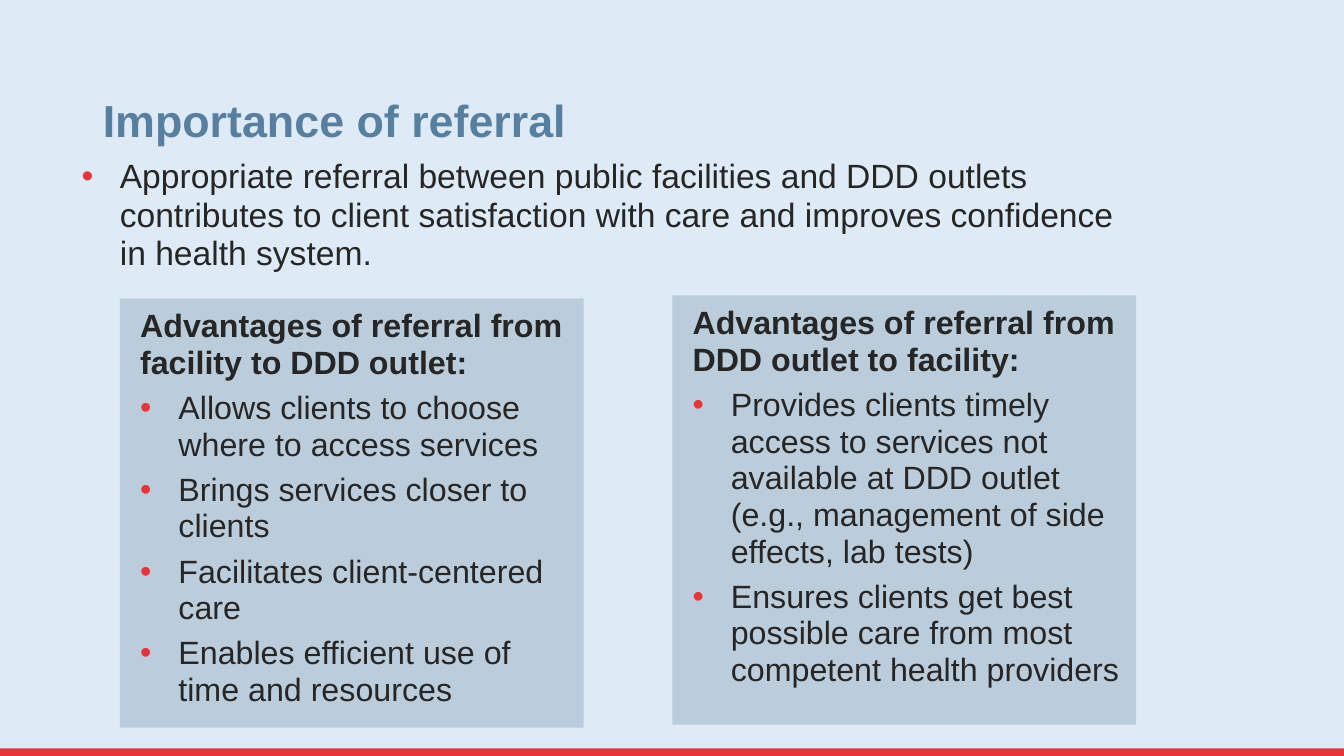
from dataclasses import dataclass

from lxml import etree
from pptx import Presentation
from pptx.dml.color import RGBColor
from pptx.enum.shapes import MSO_SHAPE
from pptx.enum.text import MSO_ANCHOR, PP_ALIGN
from pptx.oxml.ns import qn
from pptx.util import Inches, Pt

RECT = MSO_SHAPE.RECTANGLE
TOP, BOTTOM = MSO_ANCHOR.TOP, MSO_ANCHOR.BOTTOM
LEFT = PP_ALIGN.LEFT
WIDE, HIGH = Inches(13.333), Inches(7.5)
HANG = Inches(0.38)
COLORS = {"back": "DEEBF7", "red": "E73439", "title": "577F9F",
          "panel": "BBCCDA", "text": "262626"}


@dataclass(frozen=True)
class Box:
    """Place and size in percent of the slide."""
    left: float
    top: float
    width: float
    height: float

    def spots(self) -> tuple[int, int, int, int]:
        return (int(WIDE * self.left / 100), int(HIGH * self.top / 100),
                int(WIDE * self.width / 100), int(HIGH * self.height / 100))


@dataclass(frozen=True)
class Panel:
    box: Box
    head: str
    points: tuple[str, ...]


TITLE = Box(6.9, 8.53, 86.25, 11.6)
LEAD = Box(5.33, 20.27, 78.38, 16.67)
BAR = Box(0, 99, 100, 1)
PANELS = (
    Panel(Box(8.93, 39.47, 34.5, 56.8),
          "Advantages of referral from facility to DDD outlet:",
          ("Allows clients to choose where to access services",
           "Brings services closer to clients",
           "Facilitates client-centered care",
           "Enables efficient use of time and resources")),
    Panel(Box(50.03, 39.07, 34.5, 56.8),
          "Advantages of referral from DDD outlet to facility:",
          ("Provides clients timely access to services not available at DDD "
           "outlet (e.g., management of side effects, lab tests)",
           "Ensures clients get best possible care from most competent "
           "health providers")),
)


def color(name: str) -> RGBColor:
    return RGBColor.from_string(COLORS[name])


def apply(item, values: dict) -> None:
    for name, value in values.items():
        setattr(item, name, value)


def bullet(para) -> None:
    props = para._p.get_or_add_pPr()
    props.set("marL", str(HANG))
    props.set("indent", str(-HANG))
    tint = etree.SubElement(props, qn("a:buClr"))
    etree.SubElement(tint, qn("a:srgbClr"), val=COLORS["red"])
    etree.SubElement(props, qn("a:buFont"), typeface="Arial")
    etree.SubElement(props, qn("a:buChar"), char="•")


def write(para, text: str, size: float, hue: str = "text",
          bold: bool = False, dot: bool = False, gap: float = 0,
          line: float = 0.95) -> None:
    para.text = text
    if dot:
        bullet(para)
    apply(para, {"alignment": LEFT, "line_spacing": line,
                 "space_before": Pt(gap)})
    apply(para.font, {"name": "Arial", "size": Pt(size), "bold": bold})
    para.font.color.rgb = color(hue)


def block(slide, box: Box, hue: str):
    shape = slide.shapes.add_shape(RECT, *box.spots())
    shape.shadow.inherit = False
    shape.fill.solid()
    shape.fill.fore_color.rgb = color(hue)
    shape.line.fill.background()
    return shape


def draw(slide, panel: Panel) -> None:
    frame = block(slide, panel.box, "panel").text_frame
    apply(frame, {"word_wrap": True, "vertical_anchor": TOP,
                  "margin_left": Inches(0.2), "margin_right": Inches(0.1),
                  "margin_top": Inches(0.1), "margin_bottom": Inches(0.1)})
    write(frame.paragraphs[0], panel.head, 23, bold=True)
    for point in panel.points:
        write(frame.add_paragraph(), point, 23, dot=True, gap=6)


def main() -> None:
    deck = Presentation()
    apply(deck, {"slide_width": WIDE, "slide_height": HIGH})
    slide = deck.slides.add_slide(deck.slide_layouts[5])

    # Background and bottom bar
    slide.background.fill.solid()
    slide.background.fill.fore_color.rgb = color("back")
    block(slide, BAR, "red")

    # Title
    title = slide.shapes.title
    apply(title, dict(zip(("left", "top", "width", "height"), TITLE.spots())))
    apply(title.text_frame, {"word_wrap": True, "vertical_anchor": BOTTOM})
    write(title.text_frame.paragraphs[0], "Importance of referral", 32,
          hue="title", bold=True, line=0.9)

    # Panels
    for panel in PANELS:
        draw(slide, panel)

    # Lead statement
    lead = slide.shapes.add_textbox(*LEAD.spots()).text_frame
    lead.word_wrap = True
    write(lead.paragraphs[0],
          "Appropriate referral between public facilities and DDD outlets "
          "contributes to client satisfaction with care and improves "
          "confidence in health system.", 24, dot=True)

    deck.save("out.pptx")


if __name__ == "__main__":
    main()
